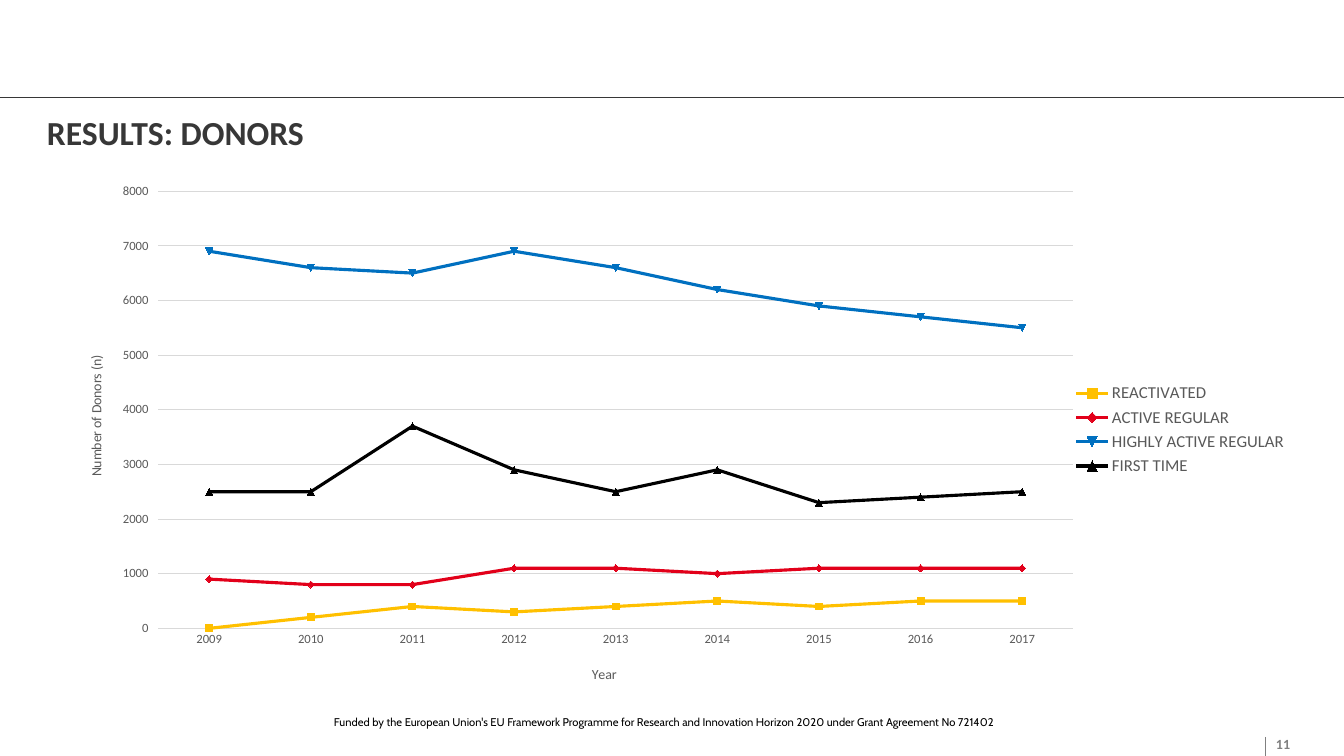
from lxml import etree
from pptx import Presentation
from pptx.chart.data import CategoryChartData
from pptx.dml.color import RGBColor
from pptx.enum.chart import XL_CHART_TYPE, XL_LEGEND_POSITION, XL_TICK_MARK
from pptx.enum.shapes import MSO_CONNECTOR
from pptx.enum.text import MSO_ANCHOR
from pptx.oxml.ns import qn
from pptx.util import Emu, Pt

LINE, STRAIGHT = XL_CHART_TYPE.LINE, MSO_CONNECTOR.STRAIGHT
RIGHT = XL_LEGEND_POSITION.RIGHT
NONE, OUT = XL_TICK_MARK.NONE, XL_TICK_MARK.OUTSIDE
TOP, MIDDLE = MSO_ANCHOR.TOP, MSO_ANCHOR.MIDDLE

SCALE = 914400 / 100.8  # EMU in one px
COLORS = {
    "dark": "373737", "gray": "808080", "label": "595959", "grid": "D9D9D9",
    "black": "000000", "gold": "FFC000", "red": "E2001A", "blue": "0070C0",
}
YEARS = [str(year) for year in range(2009, 2018)]
DONORS = [
    ("REACTIVATED", "gold", (0, 200, 400, 300, 400, 500, 400, 500, 500)),
    ("ACTIVE REGULAR", "red", (900, 800, 800, 1100, 1100, 1000, 1100, 1100, 1100)),
    ("HIGHLY ACTIVE REGULAR", "blue",
     (6900, 6600, 6500, 6900, 6600, 6200, 5900, 5700, 5500)),
    ("FIRST TIME", "black", (2500, 2500, 3700, 2900, 2500, 2900, 2300, 2400, 2500)),
]


def px(*vals):
    return [Emu(round(val * SCALE)) for val in vals]


def rgb(name):
    return RGBColor.from_string(COLORS[name])


class Deck:
    def __init__(self, face="Calibri"):
        self.face = face
        self.prs = Presentation()
        self.prs.slide_width, self.prs.slide_height = px(1344, 756)
        self.slide = self.prs.slides.add_slide(self.prs.slide_layouts[6])

    def style(self, font, size, color, bold=False, face=None):
        form = {"size": Pt(size), "bold": bold, "name": face or self.face}
        for key, val in form.items():
            setattr(font, key, val)
        font.color.rgb = rgb(color)

    def stroke(self, line, color, width):
        line.color.rgb = rgb(color)
        line.width = Pt(width)

    def text(self, box, words, size, color, bold=False, face=None, inset=0, anchor=TOP):
        frame = self.slide.shapes.add_textbox(*px(*box)).text_frame
        form = {"margin_left": 0, "margin_right": 0, "margin_bottom": 0,
                "margin_top": px(inset)[0], "word_wrap": True,
                "vertical_anchor": anchor}
        for key, val in form.items():
            setattr(frame, key, val)
        run = frame.paragraphs[0].add_run()
        run.text = words
        self.style(run.font, size, color, bold, face)

    def rule(self, ends, color, width):
        rule = self.slide.shapes.add_connector(STRAIGHT, *px(*ends))
        self.stroke(rule.line, color, width)
        etree.SubElement(rule._element.spPr, qn("a:effectLst"))

    def place(self, item, inner=False, **spots):
        """Set the manual layout of a chart part, in fractions of the chart."""
        for old in item.findall(qn("c:layout")):
            item.remove(old)
        layout = etree.Element(qn("c:layout"))
        manual = etree.SubElement(layout, qn("c:manualLayout"))
        rows = [("layoutTarget", "inner")] if inner else []
        rows += [(key + "Mode", "edge") for key in "xy"]
        rows += [(key, str(val)) for key, val in spots.items()]
        for tag, val in rows:
            etree.SubElement(manual, qn("c:" + tag)).set("val", val)
        cover = item.find(qn("c:overlay"))
        if cover is None:
            item.insert(0, layout)
        else:
            cover.addprevious(layout)

    def axis(self, axis, title, tick, x, y):
        axis.major_tick_mark, axis.minor_tick_mark = tick, NONE
        self.style(axis.tick_labels.font, 9, "label")
        run = axis.axis_title.text_frame.paragraphs[0].add_run()
        run.text = title
        self.style(run.font, 10, "label")
        self.place(axis.axis_title._element, x=x, y=y)

    def chart(self, box, cats, rows):
        data = CategoryChartData()
        data.categories = cats
        for name, _, vals in rows:
            data.add_series(name, vals)
        chart = self.slide.shapes.add_chart(LINE, *px(*box), data).chart
        self.style(chart.font, 10, "black")
        chart.has_title = False
        plot = chart.plots[0]
        plot.vary_by_categories = False
        for series, (_, color, _) in zip(plot.series, rows):
            series.smooth = False
            series.marker.style = None
            self.stroke(series.format.line, color, 2.25)
        # Axes
        cat, val = chart.category_axis, chart.value_axis
        self.axis(cat, "Year", NONE, 0.43, 0.96)
        self.axis(val, "Number of Donors (n)", OUT, 0.02, 0.35)
        self.stroke(cat.format.line, "grid", 0.75)
        val.format.line.fill.background()
        val.minimum_scale, val.maximum_scale, val.major_unit = 0, 8000, 1000
        self.stroke(val.major_gridlines.format.line, "grid", 0.75)
        # Legend and plot area
        chart.has_legend = True
        chart.legend.position = RIGHT
        chart.legend.include_in_layout = False
        self.style(chart.legend.font, 12, "label")
        self.place(chart.legend._element, x=0.82, y=0.4, w=0.18, h=0.2)
        area = chart._chartSpace.chart.plotArea
        self.place(area, inner=True, x=0.08, y=0.03, w=0.743, h=0.862)


def main():
    deck = Deck()
    # Frame and footer
    deck.rule((0, 97, 1344, 97), "dark", 0.25)
    deck.text((1276, 736, 30, 20), "11", 10, "gray", bold=True)
    deck.rule((1266, 737, 1266, 756), "gray", 0.75)
    deck.text((334, 715, 675, 19),
              "Funded by the European Union's EU Framework Programme for Research "
              "and Innovation Horizon 2020 under Grant Agreement No 721402",
              8, "black", face="Cabin")
    # Title and chart
    deck.text((47, 100, 1249, 55), "RESULTS: DONORS", 24, "dark", bold=True,
              inset=10, anchor=MIDDLE)
    deck.chart((60, 176, 1231, 511), YEARS, DONORS)
    deck.prs.save("out.pptx")


if __name__ == "__main__":
    main()
